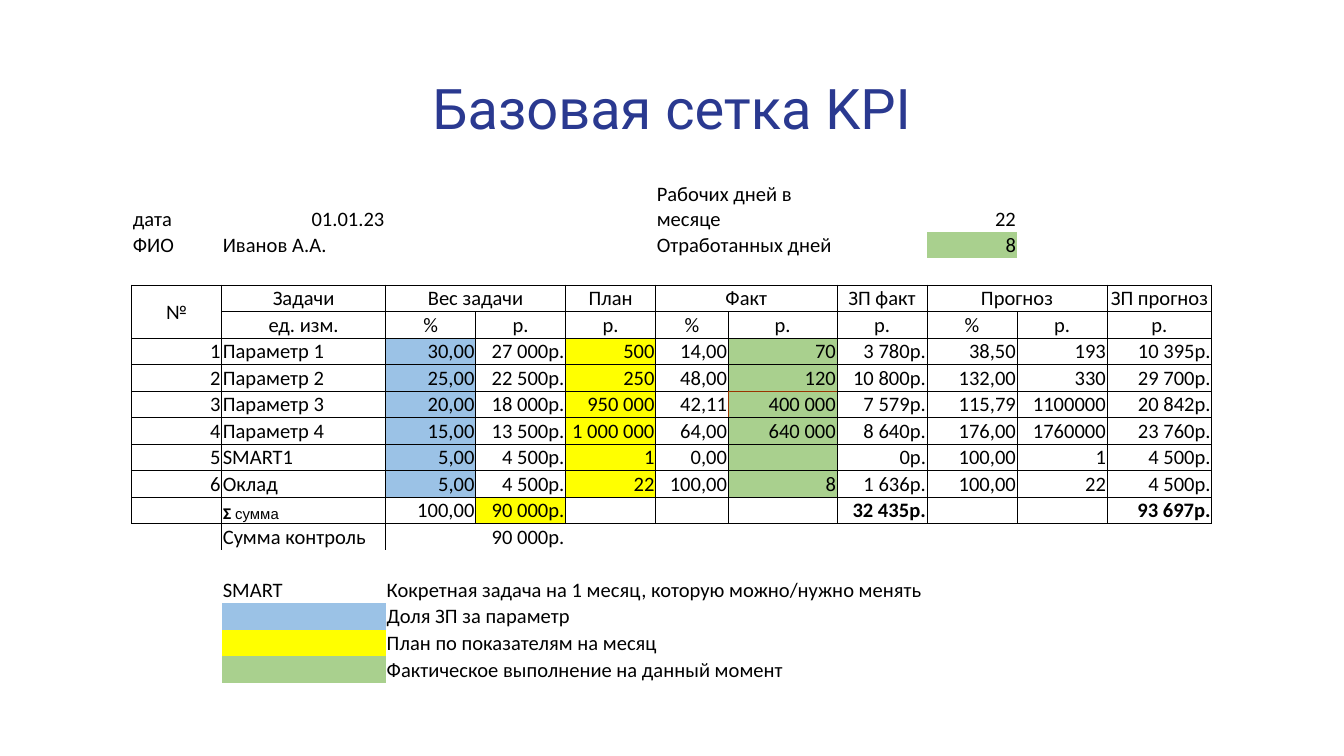
"""Build the slide with the basic KPI grid table."""
from lxml import etree
from pptx import Presentation
from pptx.dml.color import RGBColor
from pptx.enum import text
from pptx.oxml import ns
from pptx.util import Inches, Pt

NAVY = RGBColor(0x2A, 0x39, 0x90)
BLACK = RGBColor(0x00, 0x00, 0x00)
WHITE = RGBColor(0xFF, 0xFF, 0xFF)
BLUE = RGBColor(0x9B, 0xC2, 0xE6)
YELLOW = RGBColor(0xFF, 0xFF, 0x00)
GREEN = RGBColor(0xA9, 0xD0, 0x8E)
BROWN = RGBColor(0x99, 0x33, 0x00)
NO_STYLE = "{2D5ABB26-0587-4C30-8999-92F81FD0307C}"
BODY = {"name": "Calibri", "size": Pt(11), "bold": False}


def add_run(paragraph, words, color, formats):
    run = paragraph.add_run()
    run.text = words
    run.font.color.rgb = color
    for name, value in formats.items():
        setattr(run.font, name, value)


def add_border(cell, side, color):
    line = etree.SubElement(cell._tc.get_or_add_tcPr(), ns.qn(f"a:ln{side}"), w=str(Pt(0.5)))
    if color is None:
        etree.SubElement(line, ns.qn("a:noFill"))
    else:
        fill = etree.SubElement(line, ns.qn("a:solidFill"))
        etree.SubElement(fill, ns.qn("a:srgbClr"), val=str(color))


presentation = Presentation()
presentation.slide_width = Inches(10)
presentation.slide_height = presentation.slide_width * 9 // 16
slide = presentation.slides.add_slide(presentation.slide_layouts[5])

title = slide.shapes.title
title_box = {"left": 0.34, "top": 0.45, "width": 9.32, "height": 0.66}
for name, value in title_box.items():
    setattr(title, name, Inches(value))
for side in ("left", "right", "top", "bottom"):
    setattr(title.text_frame, f"margin_{side}", Inches(0.1))
title.text_frame.vertical_anchor = text.MSO_ANCHOR.TOP
title.text_frame.auto_size = text.MSO_AUTO_SIZE.NONE
paragraph = title.text_frame.paragraphs[0]
paragraph.alignment = text.PP_ALIGN.CENTER
add_run(paragraph, "Базовая сетка KPI", NAVY, {"name": "Roboto", "size": Pt(30)})

rows = [
    ["дата", "01.01.23", "", "", "", "Рабочих дней в месяце", "", "", "22"],
    ["ФИО", "Иванов А.А.", "", "", "", "Отработанных дней", "", "", "8"],
    [],
    ["№", "Задачи", "Вес задачи", "", "План", "Факт", "", "ЗП факт", "Прогноз", "", "ЗП прогноз"],
    ["", "ед. изм.", "%", "р.", "р.", "%", "р.", "р.", "%", "р.", "р."],
    ["1", "Параметр 1", "30,00", "27 000р.", "500", "14,00", "70", "3 780р.", "38,50", "193", "10 395р."],
    ["2", "Параметр 2", "25,00", "22 500р.", "250", "48,00", "120", "10 800р.", "132,00", "330", "29 700р."],
    ["3", "Параметр 3", "20,00", "18 000р.", "950 000", "42,11", "400 000", "7 579р.", "115,79", "1100000", "20 842р."],
    ["4", "Параметр 4", "15,00", "13 500р.", "1 000 000", "64,00", "640 000", "8 640р.", "176,00", "1760000", "23 760р."],
    ["5", "SMART1", "5,00", "4 500р.", "1", "0,00", "", "0р.", "100,00", "1", "4 500р."],
    ["6", "Оклад", "5,00", "4 500р.", "22", "100,00", "8", "1 636р.", "100,00", "22", "4 500р."],
    ["", "Ʃ сумма", "100,00", "90 000р.", "", "", "", "32 435р.", "", "", "93 697р."],
    ["", "Сумма контроль", "", "90 000р."],
    [],
    ["", "SMART", "Кокретная задача на 1 месяц, которую можно/нужно менять"],
    ["", "", "Доля ЗП за параметр"],
    ["", "", "План по показателям на месяц"],
    ["", "", "Фактическое выполнение на данный момент"],
]
HEADERS = (3, 4)
PARAMETERS = range(5, 11)
TOTAL, CONTROL = 11, 12
GRID = range(3, 12)
widths = [0.67, 1.22, 0.67, 0.67, 0.67, 0.54, 0.81, 0.67, 0.67, 0.67, 0.78]

fills = {(1, 8): GREEN, (TOTAL, 3): YELLOW, (TOTAL, 10): WHITE,
         (15, 1): BLUE, (16, 1): YELLOW, (17, 1): GREEN}
for row in PARAMETERS:
    fills.update({(row, 2): BLUE, (row, 4): YELLOW, (row, 6): GREEN})

borders = {}
for column in range(len(widths)):
    borders[2, column, "B"] = BLACK
    borders[CONTROL, column, "T"] = BLACK
    for row in GRID:
        for side in "LRTB":
            borders[row, column, side] = BLACK
for row, column, side in [(CONTROL, 0, "R"), (CONTROL, 1, "L"), (CONTROL, 1, "R"), (CONTROL, 2, "L")]:
    borders[row, column, side] = BLACK
for row, column, side in [(6, 6, "B"), (7, 5, "R"), (7, 6, "L"), (7, 6, "T")]:
    borders[row, column, side] = BROWN

frame = slide.shapes.add_table(len(rows), len(widths), Inches(0.98), Inches(1.34),
                               Inches(sum(widths)), Inches(3.66))
table = frame.table
table.first_row = table.horz_banding = False
table._tbl.tblPr.find(ns.qn("a:tableStyleId")).text = NO_STYLE
for column, width in zip(table.columns, widths):
    column.width = Inches(width)
for table_row in table.rows:
    table_row.height = Inches(0.19)
table.rows[0].height = Inches(0.36)

for row, words_in_row in enumerate(rows):
    for column in range(len(widths)):
        cell = table.cell(row, column)
        words = words_in_row[column] if column < len(words_in_row) else ""
        cell.margin_left = cell.margin_right = cell.margin_top = Pt(0.6)
        cell.margin_bottom = 0
        cell.vertical_anchor = text.MSO_ANCHOR.BOTTOM
        if row in HEADERS and column < 10 and (row, column) != (4, 1):
            cell.vertical_anchor = text.MSO_ANCHOR.MIDDLE
        for side in "LRTB":
            add_border(cell, side, borders.get((row, column, side)))
        if (row, column) in fills:
            cell.fill.solid()
            cell.fill.fore_color.rgb = fills[row, column]
        else:
            cell.fill.background()
        paragraph = cell.text_frame.paragraphs[0]
        if row in HEADERS:
            paragraph.alignment = text.PP_ALIGN.CENTER
        elif words[:1].isdigit():
            paragraph.alignment = text.PP_ALIGN.RIGHT
        if (row, column) == (TOTAL, 1):
            add_run(paragraph, "Ʃ ", BLACK, {"name": "Roboto", "size": Pt(8), "bold": True})
            add_run(paragraph, "сумма", BLACK, {"name": "Arial", "size": Pt(8), "bold": False})
        elif words:
            bold = row == TOTAL and column in (7, 10)
            add_run(paragraph, words, BLACK, {**BODY, "bold": bold})
        else:
            end = paragraph._p.get_or_add_endParaRPr()
            end.set("sz", "1100")
            etree.SubElement(end, ns.qn("a:latin"), typeface="Calibri")

merges = [(0, 5, 0, 6), (1, 1, 1, 2), (1, 5, 1, 6), (3, 0, 4, 0), (3, 2, 3, 3), (3, 5, 3, 6),
          (3, 8, 3, 9), (14, 2, 14, 7), (15, 2, 15, 4), (16, 2, 16, 5), (17, 2, 17, 6)]
for top, left, bottom, right in merges:
    table.cell(top, left).merge(table.cell(bottom, right))

presentation.save("out.pptx")
